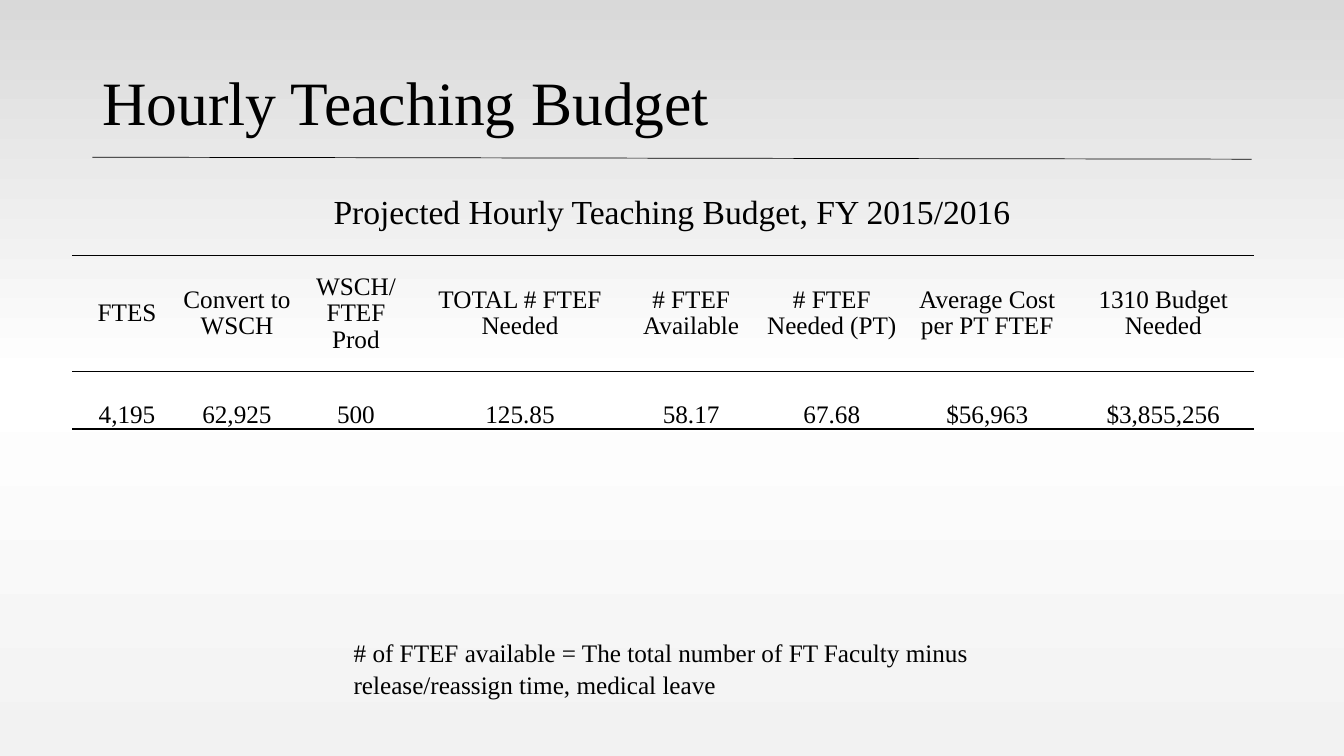
from copy import deepcopy

from pptx import Presentation
from pptx.dml.color import RGBColor
from pptx.enum import shapes, text
from pptx.oxml import ns
from pptx.oxml import xmlchemy as xc
from pptx.util import Pt

FONT = "Times New Roman"
BLACK = RGBColor(0x00, 0x00, 0x00)
BACKDROP = [
    (0, RGBColor(0xD9, 0xD9, 0xD9)),
    (0.5, RGBColor(0xFF, 0xFF, 0xFF)),
    (1, RGBColor(0xF2, 0xF2, 0xF2)),
]
NO_GRID_STYLE = "{2D5ABB26-0587-4C30-8999-92F81FD0307C}"

COLUMN_WIDTHS = [78.5, 78.5, 91.5, 143, 101.5, 99.5, 122.5, 129]
ROW_HEIGHTS = [83, 41]
# Each cell is a list of paragraphs
BUDGET = [
    [["FTES"], ["Convert to WSCH"], ["WSCH/ FTEF", "Prod"],
     ["TOTAL # FTEF", "Needed"], ["# FTEF", "Available"],
     ["# FTEF", "Needed (PT)"], ["Average Cost", "per PT FTEF"],
     ["1310 Budget", "Needed"]],
    [["4,195"], ["62,925"], ["500"], ["125.85"], ["58.17"], ["67.68"],
     ["$56,963"], ["$3,855,256"]],
]


def paint_background(slide):
    fill = slide.background.fill
    fill.gradient()
    fill.gradient_angle = 270
    stop_list = next(slide.element.iter(ns.qn("a:gsLst")))
    stop_list.append(deepcopy(stop_list[0]))
    for stop, (position, color) in zip(fill.gradient_stops, BACKDROP):
        stop.position = position
        stop.color.rgb = color


def write(frame, lines, size, align=text.PP_ALIGN.LEFT, spacing=None):
    for index, line in enumerate(lines):
        paragraph = frame.add_paragraph() if index else frame.paragraphs[0]
        paragraph.alignment = align
        paragraph.line_spacing = spacing
        run = paragraph.add_run()
        run.text = line
        run.font.name = FONT
        run.font.size = Pt(size)
        run.font.color.rgb = BLACK


def add_text(slide, box, line, size, anchor=text.MSO_ANCHOR.TOP, **style):
    frame = slide.shapes.add_textbox(*map(Pt, box)).text_frame
    frame.word_wrap = True
    frame.vertical_anchor = anchor
    write(frame, [line], size, **style)


def add_rule(slide, *ends):
    rule = slide.shapes.add_connector(
        shapes.MSO_CONNECTOR.STRAIGHT, *map(Pt, ends))
    rule.line.color.rgb = BLACK
    rule.line.width = Pt(0.5)
    rule.element.spPr.append(xc.OxmlElement("a:effectLst"))


def add_border(cell, side):
    border = xc.OxmlElement(f"a:{side}")
    border.set("w", str(Pt(1)))
    solid = xc.OxmlElement("a:solidFill")
    color = xc.OxmlElement("a:srgbClr")
    color.set("val", str(BLACK))
    solid.append(color)
    border.append(solid)
    return border


def fill_cell(cell, lines, anchor):
    cell.margin_left = cell.margin_right = 0
    cell.margin_top = cell.margin_bottom = 0
    cell.vertical_anchor = anchor
    cell.fill.background()
    properties = cell._tc.get_or_add_tcPr()
    for index, side in enumerate(("lnT", "lnB")):
        properties.insert(index, add_border(cell, side))
    write(cell.text_frame, lines, 18, text.PP_ALIGN.CENTER, 0.95)


def add_budget_table(slide, left, top):
    frame = slide.shapes.add_table(
        len(BUDGET), len(COLUMN_WIDTHS), Pt(left), Pt(top),
        Pt(sum(COLUMN_WIDTHS)), Pt(sum(ROW_HEIGHTS)))
    table = frame.table
    table.first_row = table.horz_banding = False
    next(table._tbl.iter(ns.qn("a:tableStyleId"))).text = NO_GRID_STYLE
    for column, width in zip(table.columns, COLUMN_WIDTHS):
        column.width = Pt(width)
    anchors = [text.MSO_ANCHOR.MIDDLE, text.MSO_ANCHOR.BOTTOM]
    for row, height, entries, anchor in zip(
            table.rows, ROW_HEIGHTS, BUDGET, anchors):
        row.height = Pt(height)
        for cell, lines in zip(row.cells, entries):
            fill_cell(cell, lines, anchor)


def main():
    deck = Presentation()
    deck.slide_width, deck.slide_height = Pt(960), Pt(540)
    slide = deck.slides.add_slide(deck.slide_layouts[6])
    paint_background(slide)

    # Heading and its rule
    add_rule(slide, 66, 112.3, 894, 113.7)
    add_text(slide, (66, 29, 828, 93), "Hourly Teaching Budget", 44,
             anchor=text.MSO_ANCHOR.MIDDLE, spacing=0.9)

    # Budget table with its caption
    add_text(slide, (199.5, 133, 561, 36),
             "Projected Hourly Teaching Budget, FY 2015/2016", 24,
             align=text.PP_ALIGN.CENTER)
    add_budget_table(slide, 51.5, 182.5)

    # Footnote
    add_text(slide, (245.5, 450, 469, 51),
             "# of FTEF available = The total number of FT Faculty minus "
             "release/reassign time, medical leave", 18, spacing=1.07)

    deck.save("out.pptx")


if __name__ == "__main__":
    main()
